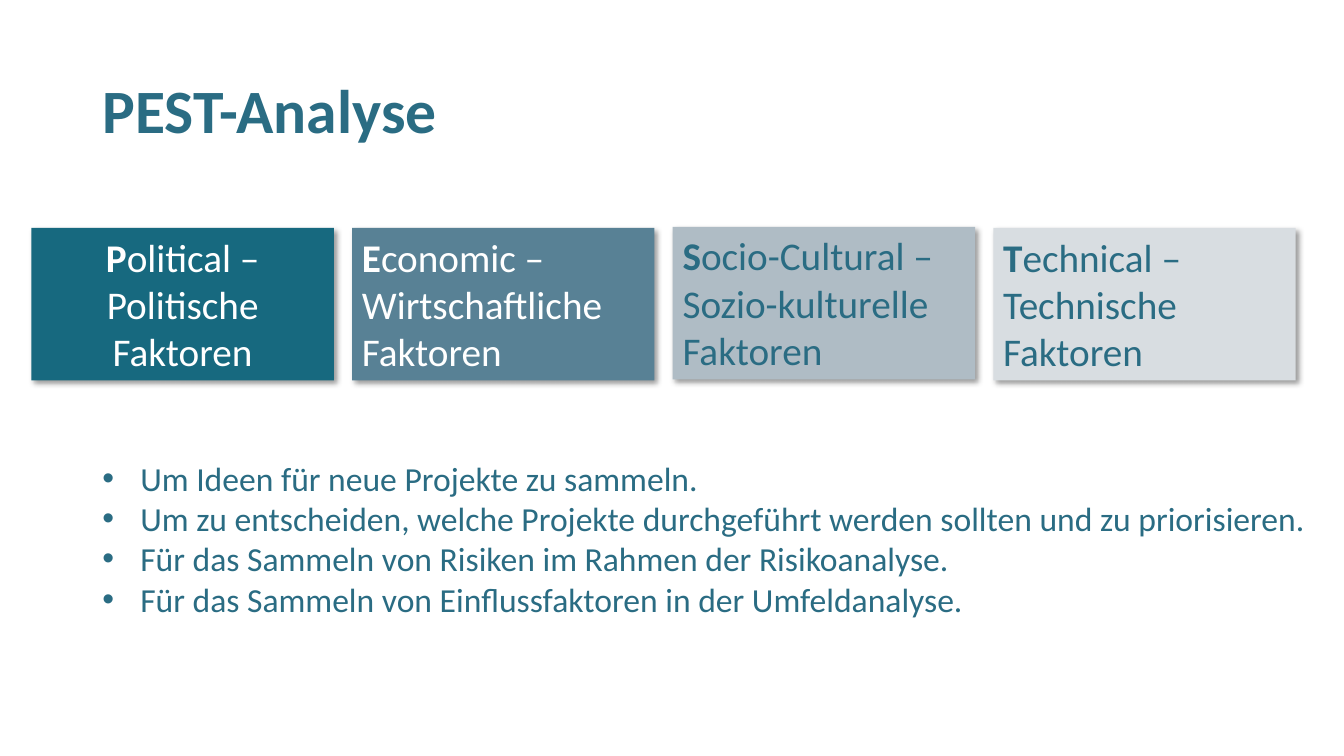
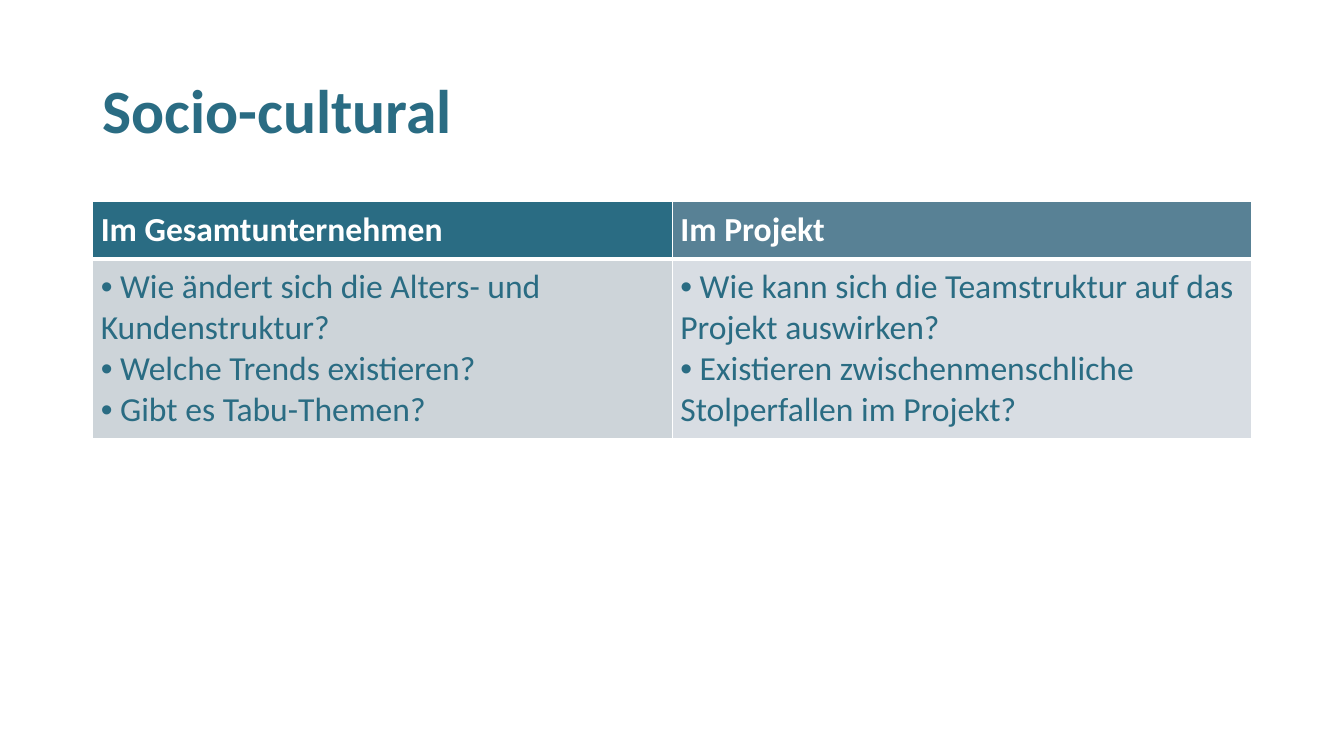
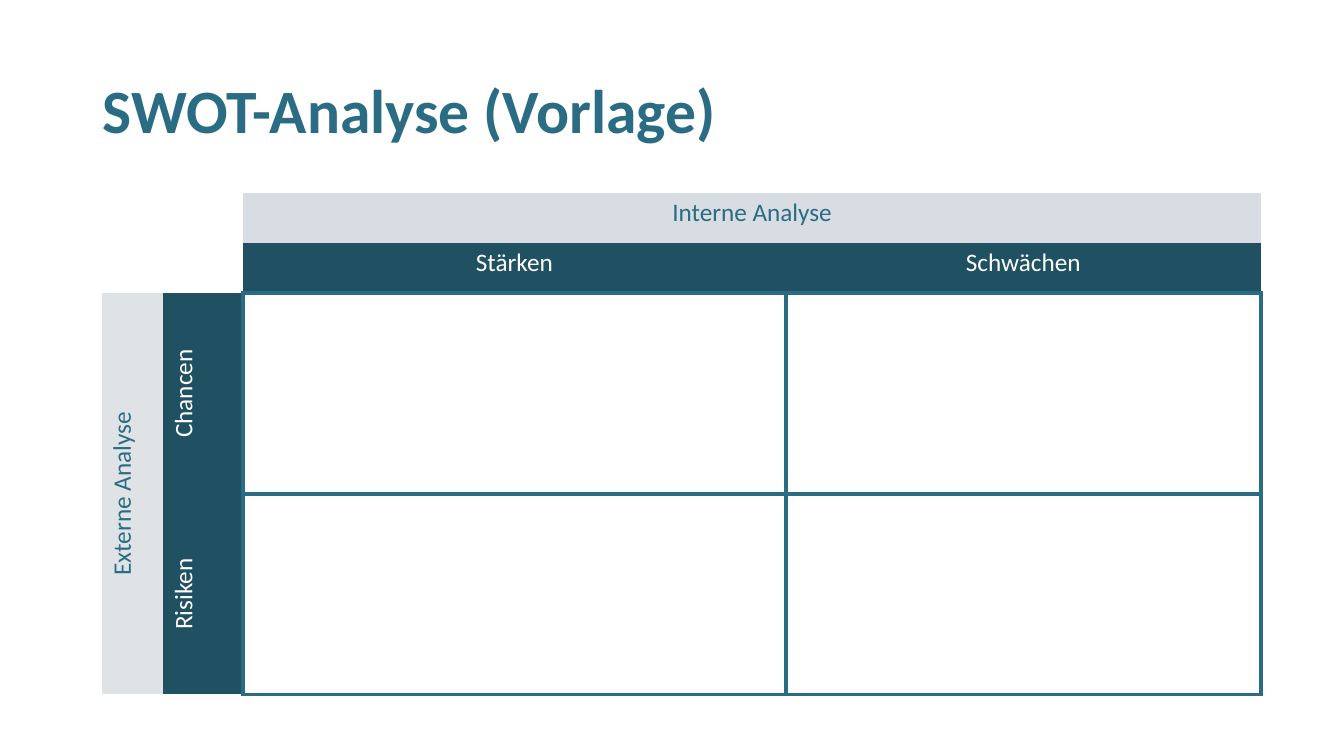
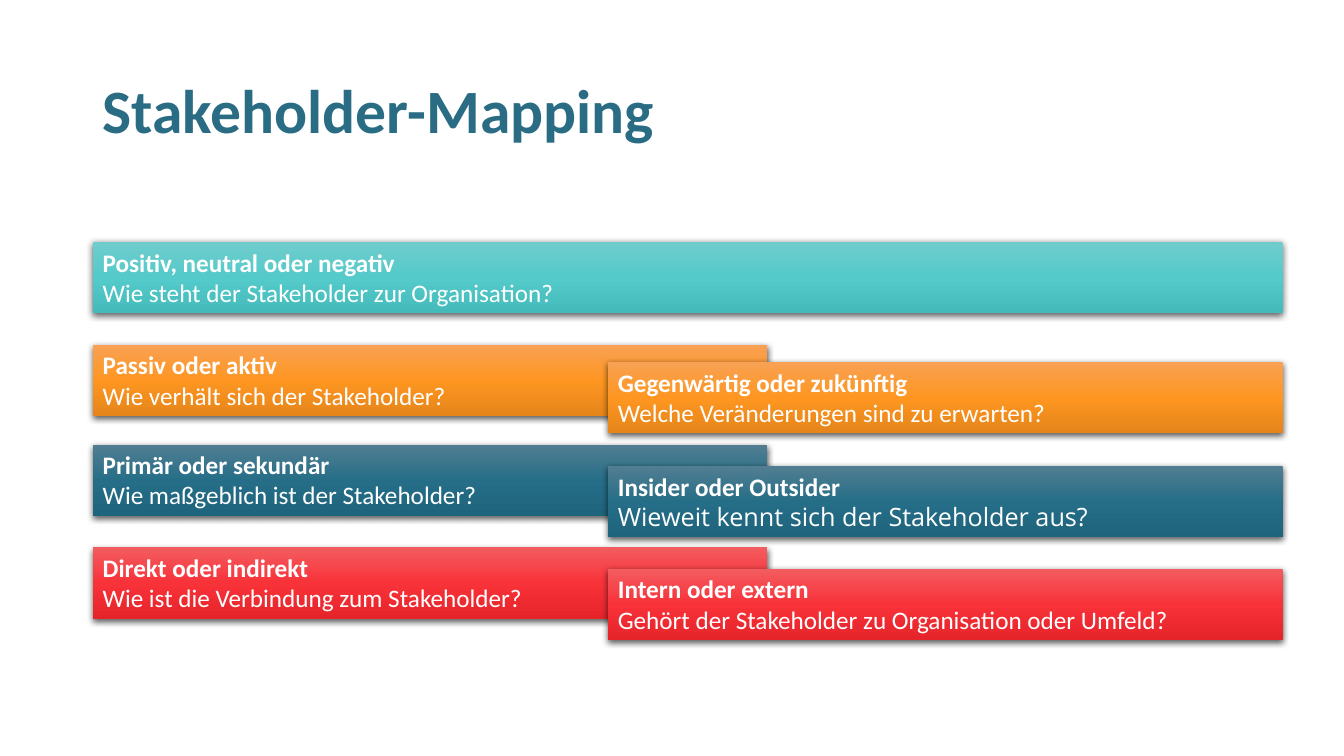
from lxml.etree import SubElement
from pptx import Presentation
from pptx.dml.color import RGBColor
from pptx.enum.shapes import MSO_SHAPE
from pptx.enum.text import MSO_ANCHOR, MSO_AUTO_SIZE, PP_ALIGN
from pptx.oxml.ns import qn
from pptx.util import Pt

COLORS = {
    "petrol": "2A6C83",
    "deep": "17697F",
    "dark": "205162",
    "steel": "588195",
    "mist": "AFBCC5",
    "silver": "D8DDE1",
    "ice": "D8DDE3",
    "ash": "CDD4D9",
    "pale": "DFE3E5",
    "white": "FFFFFF",
    "black": "000000",
}
GRADIENTS = {
    "teal": ("70CCCC", "54CACA", "44BABA"),
    "orange": ("F8A154", "FE9621", "E5851A"),
    "blue": ("527E92", "266E87", "1D647C"),
    "red": ("F35C60", "F83239", "E5242A"),
}
FONT = "Calibri"
NO_GRID_STYLE = "{2D5ABB26-0587-4C30-8999-92F81FD0307C}"
TITLE_AND_CONTENT, TITLE_ONLY = 1, 5


def rgb(name):
    return RGBColor.from_string(COLORS[name])


def emu(points):
    return str(int(Pt(points)))


def style_runs(paragraph, size, color, bold=False, font=FONT):
    for run in paragraph.runs:
        run.font.name = font
        run.font.size = Pt(size)
        run.font.bold = bold
        run.font.color.rgb = rgb(color)


def place(shape, box):
    shape.left, shape.top, shape.width, shape.height = map(Pt, box)


def add_titled_slide(deck, layout, heading):
    slide = deck.slides.add_slide(deck.slide_layouts[layout])
    title = slide.shapes.title
    place(title, (66, 28.75, 828, 104.5))
    frame = title.text_frame
    frame.text = heading
    frame.auto_size = MSO_AUTO_SIZE.NONE
    frame.vertical_anchor = MSO_ANCHOR.MIDDLE
    line = frame.paragraphs[0]
    line.alignment = PP_ALIGN.LEFT
    line.line_spacing = 0.9
    style_runs(line, 44, "petrol", bold=True)
    return slide


def add_shadow(shape, opacity, blur, distance, angle):
    effects = SubElement(shape._element.spPr, qn("a:effectLst"))
    shadow = SubElement(effects, qn("a:outerShdw"), blurRad=emu(blur), dist=emu(distance),
                        dir=str(angle * 60000), algn="t", rotWithShape="0")
    tint = SubElement(shadow, qn("a:srgbClr"), val=COLORS["black"])
    SubElement(tint, qn("a:alpha"), val=str(opacity * 1000))


def add_panel(slide, box):
    panel = slide.shapes.add_shape(MSO_SHAPE.RECTANGLE, *map(Pt, box))
    panel.line.fill.background()
    panel.text_frame.word_wrap = True
    panel.text_frame.vertical_anchor = MSO_ANCHOR.TOP
    return panel


def add_factor_card(slide, box, phrase, fill, ink, alignment):
    card = add_panel(slide, box)
    card.fill.solid()
    card.fill.fore_color.rgb = rgb(fill)
    add_shadow(card, 40, 4, 3, 45)
    paragraph = card.text_frame.paragraphs[0]
    paragraph.alignment = alignment
    for part in (phrase[0], phrase[1:]):
        paragraph.add_run().text = part
    style_runs(paragraph, 28, ink)
    paragraph.runs[0].font.bold = True


def add_purpose_list(slide, box, purposes):
    body = slide.placeholders[1]
    place(body, box)
    frame = body.text_frame
    frame.text = "\n".join(purposes)
    frame.auto_size = MSO_AUTO_SIZE.NONE
    for paragraph in frame.paragraphs:
        paragraph.space_before = Pt(0)
        style_runs(paragraph, 24, "petrol")


def set_gradient(shape, stops):
    shape.fill.gradient()
    shape.fill.gradient_angle = 270
    stop_list = next(shape._element.spPr.iter(qn("a:gsLst")))
    for stop in list(stop_list):
        stop_list.remove(stop)
    for index, color in enumerate(stops):
        stop = SubElement(stop_list, qn("a:gs"), pos=str(index * 50000))
        SubElement(stop, qn("a:srgbClr"), val=color)


def add_question_band(slide, box, gradient, criterion, question, question_font=FONT):
    band = add_panel(slide, box)
    set_gradient(band, GRADIENTS[gradient])
    add_shadow(band, 63, 4.5, 1.5, 90)
    band.text_frame.text = f"{criterion}\n{question}"
    heading, detail = band.text_frame.paragraphs
    heading.alignment = detail.alignment = PP_ALIGN.LEFT
    style_runs(heading, 18, "white", bold=True)
    style_runs(detail, 18, "white", font=question_font)


def add_plain_table(slide, left, top, widths, heights):
    frame = slide.shapes.add_table(len(heights), len(widths), Pt(left), Pt(top),
                                   Pt(sum(widths)), Pt(sum(heights)))
    table = frame.table
    table.first_row = table.horz_banding = False
    table._tbl.tblPr.find(qn("a:tableStyleId")).text = NO_GRID_STYLE
    for column, width in zip(table.columns, widths):
        column.width = Pt(width)
    for row, height in zip(table.rows, heights):
        row.height = Pt(height)
    return table


def fill_cell(cell, color):
    cell.fill.solid()
    cell.fill.fore_color.rgb = rgb(color)


def set_borders(cell, color, widths):
    properties = cell._tc.get_or_add_tcPr()
    sides = [side for side in "LRTB" if side in widths]
    for index, side in enumerate(sides):
        edge = SubElement(properties, qn(f"a:ln{side}"), w=emu(widths[side]))
        properties.insert(index, edge)
        paint = SubElement(edge, qn("a:solidFill"))
        SubElement(paint, qn("a:srgbClr"), val=COLORS[color])


def add_question_table(slide, left, top, columns):
    table = add_plain_table(slide, left, top, [414] * len(columns), [40, 127.75])
    for index, (heading, heading_fill, questions, questions_fill) in enumerate(columns):
        head, content = table.cell(0, index), table.cell(1, index)
        head.text = heading
        content.text = "\n".join(questions)
        for cell, fill in ((head, heading_fill), (content, questions_fill)):
            fill_cell(cell, fill)
            cell.vertical_anchor = MSO_ANCHOR.MIDDLE
            cell.margin_left = cell.margin_right = Pt(5.76)
            cell.margin_top = cell.margin_bottom = Pt(5.76)
        set_borders(head, "white", {"L": 1, "R": 1, "T": 1, "B": 3})
        set_borders(content, "white", {"L": 1, "R": 1, "T": 3, "B": 1})
        style_runs(head.text_frame.paragraphs[0], 24, "white", bold=True)
        for paragraph in content.text_frame.paragraphs:
            layout = paragraph._p.get_or_add_pPr()
            layout.set("marL", "0")
            layout.set("indent", "0")
            SubElement(layout, qn("a:buFont"), typeface="Arial")
            SubElement(layout, qn("a:buChar"), char="•")
            style_runs(paragraph, 24, "petrol")


def add_swot_grid(slide, left, top):
    table = add_plain_table(slide, left, top, [44, 57, 387.5, 339.5], [36, 36, 143.25, 143.25])
    table.cell(0, 2).merge(table.cell(0, 3))
    table.cell(2, 0).merge(table.cell(3, 0))
    labels = [
        (0, 2, "Interne Analyse", "ice", "petrol", ""),
        (1, 2, "Stärken", "dark", "white", "B"),
        (1, 3, "Schwächen", "dark", "white", "B"),
        (2, 0, "Externe Analyse", "pale", "petrol", ""),
        (2, 1, "Chancen", "dark", "white", "R"),
        (3, 1, "Risiken", "dark", "white", "R"),
    ]
    for row, column, label, fill, ink, edge in labels:
        cell = table.cell(row, column)
        cell.text = label
        fill_cell(cell, fill)
        set_borders(cell, "petrol", dict.fromkeys(edge, 3))
        if row >= 2:
            cell._tc.get_or_add_tcPr().set("vert", "vert270")
        paragraph = cell.text_frame.paragraphs[0]
        paragraph.alignment = PP_ALIGN.CENTER
        style_runs(paragraph, 18, ink)
    for row in (2, 3):
        for column in (2, 3):
            set_borders(table.cell(row, column), "petrol", dict.fromkeys("LRTB", 3))


def build_pest(deck):
    slide = add_titled_slide(deck, TITLE_AND_CONTENT, "PEST-Analyse")
    factors = [
        ("Political – Politische Faktoren", "deep", "white", PP_ALIGN.CENTER, 162.75),
        ("Economic – Wirtschaftliche Faktoren", "steel", "white", PP_ALIGN.LEFT, 162.75),
        ("Socio-Cultural – Sozio-kulturelle Faktoren", "mist", "petrol", PP_ALIGN.LEFT, 162),
        ("Technical – Technische Faktoren", "silver", "petrol", PP_ALIGN.LEFT, 162.75),
    ]
    for index, (phrase, fill, ink, alignment, top) in enumerate(factors):
        add_factor_card(slide, (22.5 + index * 229, top, 216, 109), phrase, fill, ink, alignment)
    add_purpose_list(slide, (66, 323.25, 894, 124), [
        "Um Ideen für neue Projekte zu sammeln.",
        "Um zu entscheiden, welche Projekte durchgeführt werden sollten und zu priorisieren.",
        "Für das Sammeln von Risiken im Rahmen der Risikoanalyse.",
        "Für das Sammeln von Einflussfaktoren in der Umfeldanalyse.",
    ])


def build_socio_cultural(deck):
    slide = add_titled_slide(deck, TITLE_ONLY, "Socio-cultural")
    add_question_table(slide, 66.25, 144, [
        ("Im Gesamtunternehmen", "petrol", [
            " Wie ändert sich die Alters- und Kundenstruktur?",
            " Welche Trends existieren?",
            " Gibt es Tabu-Themen?",
        ], "ash"),
        ("Im Projekt", "steel", [
            " Wie kann sich die Teamstruktur auf das Projekt auswirken?",
            " Existieren zwischenmenschliche Stolperfallen im Projekt?",
        ], "ice"),
    ])


def build_swot(deck):
    slide = add_titled_slide(deck, TITLE_ONLY, "SWOT-Analyse (Vorlage)")
    add_swot_grid(slide, 72.75, 137.5)


def build_stakeholders(deck):
    slide = add_titled_slide(deck, TITLE_ONLY, "Stakeholder-Mapping")
    left, right, full, part, height = 66.25, 434.25, 850, 482, 51
    bands = [
        (left, 172.75, full, "teal", "Positiv, neutral oder negativ",
         "Wie steht der Stakeholder zur Organisation?", FONT),
        (left, 246.25, part, "orange", "Passiv oder aktiv",
         "Wie verhält sich der Stakeholder?", FONT),
        (left, 317.5, part, "blue", "Primär oder sekundär",
         "Wie maßgeblich ist der Stakeholder?", FONT),
        (left, 391, part, "red", "Direkt oder indirekt",
         "Wie ist die Verbindung zum Stakeholder?", FONT),
        (right, 258.5, part, "orange", "Gegenwärtig oder zukünftig",
         "Welche Veränderungen sind zu erwarten?", FONT),
        (right, 332.75, part, "blue", "Insider oder Outsider",
         "Wieweit kennt sich der Stakeholder aus?", "Open Sans"),
        (right, 406.25, part, "red", "Intern oder extern",
         "Gehört der Stakeholder zu Organisation oder Umfeld?", FONT),
    ]
    for x, y, width, gradient, criterion, question, font in bands:
        add_question_band(slide, (x, y, width, height), gradient, criterion, question, font)


def main():
    deck = Presentation()
    deck.slide_width, deck.slide_height = Pt(960), Pt(540)
    for build in (build_pest, build_socio_cultural, build_swot, build_stakeholders):
        build(deck)
    deck.save("out.pptx")


if __name__ == "__main__":
    main()
